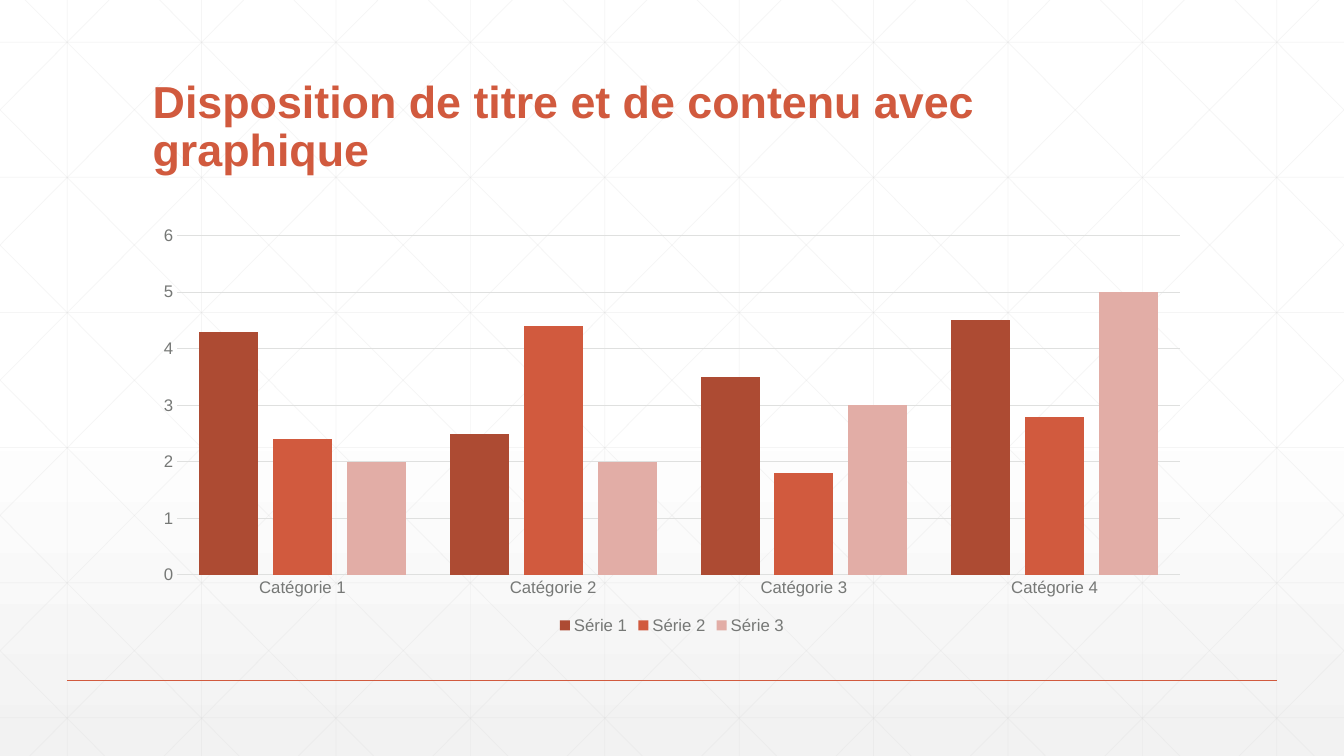
from lxml.etree import SubElement as Sub
from pptx import Presentation
from pptx.chart.data import CategoryChartData as Data
from pptx.dml.color import RGBColor
from pptx.enum.chart import XL_CHART_TYPE as Kind, XL_LEGEND_POSITION as Place
from pptx.enum.chart import XL_TICK_MARK as Tick
from pptx.enum.shapes import MSO_CONNECTOR as Link
from pptx.enum.text import MSO_ANCHOR as Anchor
from pptx.oxml.ns import qn
from pptx.util import Pt

WIDE, HIGH = 960, 540
FONT = "Arial"
RUST, GREY, RULE, MESH = "D15A3E", "767876", "DFE0DF", "D9D9D9"
STEP = 96
CATS = ["Catégorie 1", "Catégorie 2", "Catégorie 3", "Catégorie 4"]
SERIES = [
    ("Série 1", (4.3, 2.5, 3.5, 4.5), "AD4B33"),
    ("Série 2", (2.4, 4.4, 1.8, 2.8), RUST),
    ("Série 3", (2, 2, 3, 5), "E2ADA6"),
]


def tint(hue):
    return RGBColor.from_string(hue)


def style(font, size, hue, bold=False):
    font.name, font.size, font.bold = FONT, Pt(size), bold
    font.color.rgb = tint(hue)


def stroke(line, hue, width):
    line.color.rgb = tint(hue)
    line.width = Pt(width)


def rule(slide, start, end, hue, width, alpha=None):
    """Draw a straight line; alpha is its opacity in percent."""
    wire = slide.shapes.add_connector(
        Link.STRAIGHT, *(Pt(v) for v in (*start, *end)))
    stroke(wire.line, hue, width)
    props = wire._element.spPr
    Sub(props, qn("a:effectLst"))
    if alpha:
        shade = props.find(".//" + qn("a:srgbClr"))
        Sub(shade, qn("a:alpha")).set("val", str(alpha * 1000))


def write(slide, box, text, size, hue, bold=False, anchor=Anchor.TOP, gap=1.0):
    shape = slide.shapes.add_textbox(*(Pt(v) for v in box))
    frame = shape.text_frame
    frame.word_wrap, frame.vertical_anchor = True, anchor
    para = frame.paragraphs[0]
    para.text, para.line_spacing = text, gap
    style(para.font, size, hue, bold)


def backdrop(slide):
    fill = slide.background.fill
    fill.gradient()
    fill.gradient_angle = 270
    for stop, (pos, hue) in zip(fill.gradient_stops,
                                [(0.53, "FFFFFF"), (1, "F2F2F2")]):
        stop.position, stop.color.rgb = pos, tint(hue)


def mesh(slide, wide, high):
    """Cover the slide with upright, level and crossed faint lines."""
    ends = [((48 + STEP * i, 0), (48 + STEP * i, high)) for i in range(10)]
    rows = [30.2 + 96.5 * i for i in range(6)]
    ends += [((0, y), (wide, y)) for y in rows]
    run = 536.8
    for i in range(-5, 10):
        top = 18 + STEP * i
        left, right = max(top, 0), min(top + run, wide)
        y1, y2 = ((x - top) * high / run for x in (left, right))
        ends += [((left, y1), (right, y2)),
                 ((wide - left, y1), (wide - right, y2))]
    for start, end in ends:
        rule(slide, start, end, MESH, 0.5, alpha=25)


def columns(slide, box):
    data = Data()
    data.categories = CATS
    for name, vals, _ in SERIES:
        data.add_series(name, vals)
    chart = slide.shapes.add_chart(
        Kind.COLUMN_CLUSTERED, *(Pt(v) for v in box), data).chart
    style(chart.font, 12, GREY)
    chart.has_title = False
    chart.has_legend = True
    chart.legend.position = Place.BOTTOM
    chart.legend.include_in_layout = False
    style(chart.legend.font, 12, GREY)

    plot = chart.plots[0]
    plot.gap_width, plot.overlap, plot.vary_by_categories = 75, -25, False
    for bars, (_, _, hue) in zip(plot.series, SERIES):
        bars.format.fill.solid()
        bars.format.fill.fore_color.rgb = tint(hue)

    cat, val = chart.category_axis, chart.value_axis
    for axis in (cat, val):
        axis.major_tick_mark = axis.minor_tick_mark = Tick.NONE
        style(axis.tick_labels.font, 12, GREY)
    stroke(cat.format.line, RULE, 0.75)
    val.minimum_scale, val.maximum_scale, val.major_unit = 0, 6, 1
    val.format.line.fill.background()
    stroke(val.major_gridlines.format.line, RULE, 0.75)


def main():
    deck = Presentation()
    deck.slide_width, deck.slide_height = Pt(WIDE), Pt(HIGH)
    slide = deck.slides.add_slide(deck.slide_layouts[6])
    backdrop(slide)
    mesh(slide, WIDE, HIGH)
    rule(slide, (48, 486), (WIDE - 48, 486), RUST, 1)
    write(slide, (102, 39.6, 756, 90),
          "Disposition de titre et de contenu avec graphique",
          32, RUST, bold=True, anchor=Anchor.BOTTOM, gap=0.9)
    columns(slide, (102, 156, 756, 300))
    deck.save("out.pptx")


if __name__ == "__main__":
    main()
